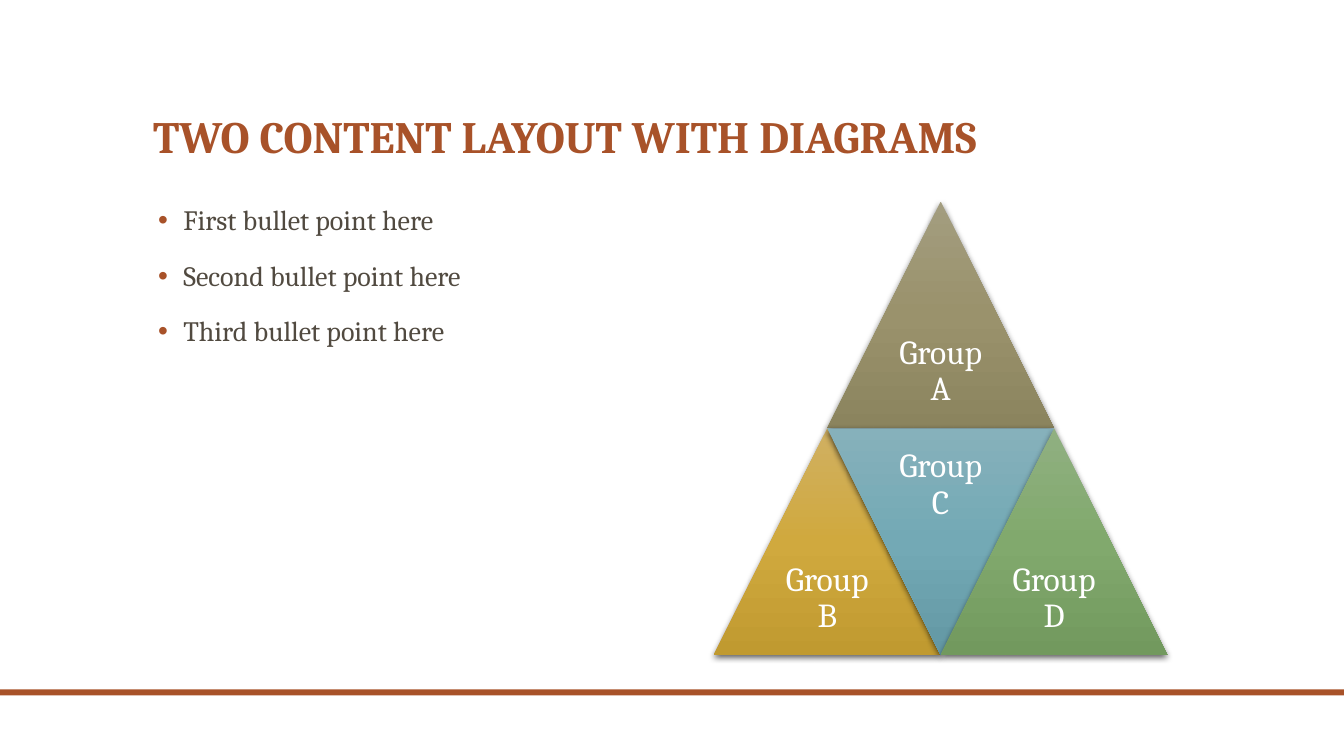
from dataclasses import dataclass

from pptx import Presentation
from pptx.dml.color import RGBColor
from pptx.enum.shapes import MSO_SHAPE as Preset
from pptx.enum.text import MSO_ANCHOR as Anchor, PP_ALIGN as Align
from pptx.oxml import parse_xml
from pptx.oxml.ns import nsdecls, qn
from pptx.shapes.autoshape import Shape
from pptx.shapes.shapetree import GroupShapes, SlideShapes
from pptx.text.text import TextFrame
from pptx.util import Inches, Pt


@dataclass(frozen=True)
class Theme:
    font: str = "Cambria"
    accent: str = "A85229"
    body: str = "514A40"
    light: str = "FFFFFF"
    shadow: str = "000000"
    title_size: int = 32
    body_size: int = 20
    label_size: int = 24


@dataclass(frozen=True)
class Segment:
    label: str
    column: float
    row: int
    colors: tuple[str, str, str]
    inverted: bool = False


THEME = Theme()
PYRAMID_LEFT, PYRAMID_TOP, SIDE = 7.08, 2.0, 2.25
BULLETS = ["First bullet point here", "Second bullet point here", "Third bullet point here"]
SEGMENTS = [
    Segment("Group A", 0.5, 0, ("A39D7F", "9A926C", "8B845E")),
    Segment("Group B", 0, 1, ("D0B062", "D0A93E", "C09A30")),
    Segment("Group C", 0.5, 1, ("86B1BB", "73A9B5", "6398A4"), inverted=True),
    Segment("Group D", 1, 1, ("90B081", "81A96D", "72995E")),
]


def add_text_frame(shapes: SlideShapes | GroupShapes, left: float, top: float,
                   width: float, height: float, anchor: Anchor) -> TextFrame:
    box = shapes.add_textbox(Inches(left), Inches(top), Inches(width), Inches(height))
    frame = box.text_frame
    frame.word_wrap = True
    frame.vertical_anchor = anchor
    return frame


def add_run(paragraph, text: str, size: int, color: str, bold: bool = False) -> None:
    paragraph.line_spacing = 0.9
    run = paragraph.add_run()
    run.text = text
    run.font.name = THEME.font
    run.font.size = Pt(size)
    run.font.bold = bold
    run.font.color.rgb = RGBColor.from_string(color)


def add_bullet(paragraph) -> None:
    properties = paragraph._p.get_or_add_pPr()
    properties.set("marL", str(Inches(0.3)))
    properties.set("indent", str(Inches(-0.25)))
    for xml in (
        f'<a:buClr {nsdecls("a")}><a:srgbClr val="{THEME.accent}"/></a:buClr>',
        f'<a:buFont {nsdecls("a")} typeface="Arial"/>',
        f'<a:buChar {nsdecls("a")} char="•"/>',
    ):
        properties.append(parse_xml(xml))


def set_gradient(shape: Shape, colors: tuple[str, str, str]) -> None:
    shape.fill.gradient()
    default = shape._element.spPr.find(qn("a:gradFill"))
    stops = "".join(
        f'<a:gs pos="{index * 50000}"><a:srgbClr val="{color}"/></a:gs>'
        for index, color in enumerate(colors)
    )
    default.getparent().replace(default, parse_xml(
        f'<a:gradFill {nsdecls("a")} rotWithShape="0"><a:gsLst>{stops}</a:gsLst>'
        '<a:lin ang="5400000" scaled="0"/></a:gradFill>'
    ))


def set_shadow(shape: Shape) -> None:
    shape.shadow.inherit = False
    shape._element.spPr.find(qn("a:effectLst")).append(parse_xml(
        f'<a:outerShdw {nsdecls("a")} blurRad="{Pt(4.5)}" dist="{Pt(1.5)}" '
        f'dir="5400000" rotWithShape="0"><a:srgbClr val="{THEME.shadow}">'
        '<a:alpha val="63000"/></a:srgbClr></a:outerShdw>'
    ))


def add_segment(shapes: GroupShapes, segment: Segment) -> None:
    left = PYRAMID_LEFT + segment.column * SIDE
    top = PYRAMID_TOP + segment.row * SIDE
    triangle = shapes.add_shape(Preset.ISOSCELES_TRIANGLE, Inches(left), Inches(top),
                                Inches(SIDE), Inches(SIDE))
    triangle.rotation = 180 if segment.inverted else 0
    triangle.line.fill.background()
    set_gradient(triangle, segment.colors)
    set_shadow(triangle)

    label_top = top if segment.inverted else top + SIDE / 2
    frame = add_text_frame(shapes, left + SIDE / 4, label_top, SIDE / 2, SIDE / 2, Anchor.MIDDLE)
    frame.margin_top = frame.margin_bottom = Inches(0.1)
    paragraph = frame.paragraphs[0]
    paragraph.alignment = Align.CENTER
    add_run(paragraph, segment.label, THEME.label_size, THEME.light)


def add_bullets(shapes: SlideShapes) -> None:
    frame = add_text_frame(shapes, 1.42, 2, 5.17, 4.5, Anchor.TOP)
    for index, text in enumerate(BULLETS):
        paragraph = frame.add_paragraph() if index else frame.paragraphs[0]
        paragraph.line_spacing = 0.9
        paragraph.space_before = Pt(18 if index else 0)
        add_bullet(paragraph)
        add_run(paragraph, text, THEME.body_size, THEME.body)


def main() -> None:
    presentation = Presentation()
    presentation.slide_width, presentation.slide_height = Inches(13.33), Inches(7.5)
    slide = presentation.slides.add_slide(presentation.slide_layouts[6])
    shapes = slide.shapes

    footer_bar = shapes.add_shape(Preset.RECTANGLE, 0, Inches(6.84),
                                  presentation.slide_width, Inches(0.06))
    footer_bar.fill.solid()
    footer_bar.fill.fore_color.rgb = RGBColor.from_string(THEME.accent)
    footer_bar.line.fill.background()
    footer_bar.shadow.inherit = False

    title = add_text_frame(shapes, 1.42, 0.42, 10.5, 1.25, Anchor.BOTTOM)
    add_run(title.paragraphs[0], "TWO CONTENT LAYOUT WITH DIAGRAMS",
            THEME.title_size, THEME.accent, bold=True)
    add_bullets(shapes)

    pyramid = shapes.add_group_shape()
    for segment in SEGMENTS:
        add_segment(pyramid.shapes, segment)
    presentation.save("out.pptx")


if __name__ == "__main__":
    main()
